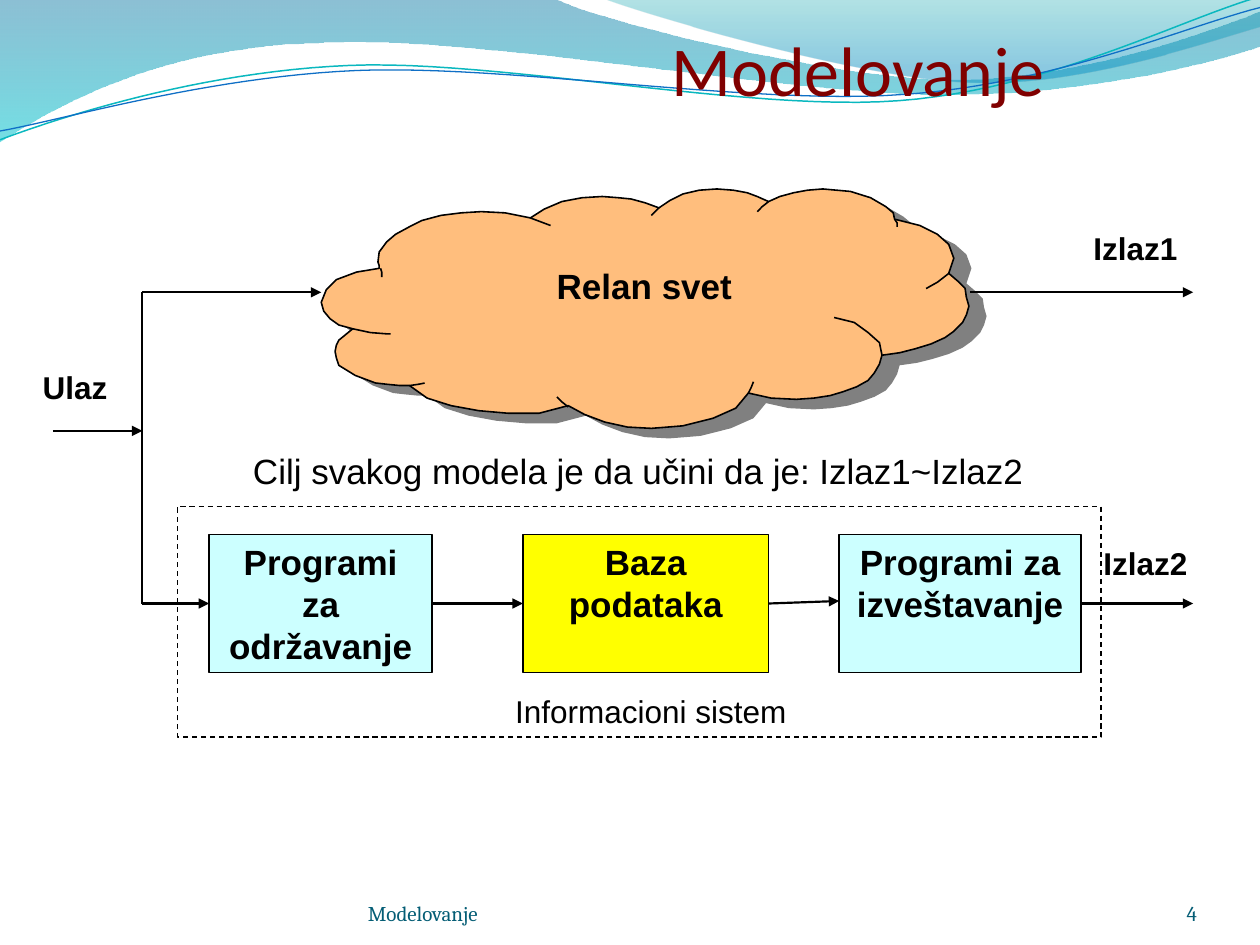
import pptx
import pptx.util
import pptx.dml.color
import pptx.enum.dml
import pptx.enum.shapes
import pptx.enum.text
import pptx.oxml
import pptx.oxml.ns
from lxml import etree

Inches = pptx.util.Inches
Pt = pptx.util.Pt
ANCHOR = pptx.enum.text.MSO_ANCHOR
ALIGN = pptx.enum.text.PP_ALIGN
BLACK = "000000"


def color(value):
    return pptx.dml.color.RGBColor.from_string(value)


def add_xml(parent, tag, **attrs):
    return etree.SubElement(parent, pptx.oxml.ns.qn(tag), attrs)


def write(tf, text, size=18, font="Arial", fill=BLACK, bold=False, align=ALIGN.LEFT,
          anchor=ANCHOR.TOP, insets=(0.1, 0.05, 0.1, 0.05), wrap=True):
    tf.word_wrap = wrap
    tf.auto_size = pptx.enum.text.MSO_AUTO_SIZE.NONE
    tf.vertical_anchor = anchor
    tf.margin_left, tf.margin_top, tf.margin_right, tf.margin_bottom = map(Inches, insets)
    p = tf.paragraphs[0]
    p.alignment = align
    r = p.add_run()
    r.text = text
    r.font.size = Pt(size)
    r.font.name = font
    r.font.bold = bold
    r.font.color.rgb = color(fill)


def flatten(path, steps=24):
    points = [path[0]]
    for part in path[1:]:
        if len(part) == 2:
            points.append(part)
            continue
        start, c1, c2, end = points[-1], part[:2], part[2:4], part[4:]
        for i in range(1, steps + 1):
            t = i / steps
            u = 1 - t
            points.append(tuple(
                u**3 * a + 3 * u * u * t * b + 3 * u * t * t * c + t**3 * d
                for a, b, c, d in zip(start, c1, c2, end)))
    return points


class Slide:
    def __init__(self, prs):
        self.s = prs.slides.add_slide(prs.slide_layouts[5])
        self.shapes = self.s.shapes

    def style(self, sp, fill=None, line=None, width=0.75, dash=None):
        sp.shadow.inherit = False
        if fill:
            sp.fill.solid()
            sp.fill.fore_color.rgb = color(fill)
        else:
            sp.fill.background()
        if line:
            sp.line.color.rgb = color(line)
            sp.line.width = Pt(width)
            sp.line.dash_style = dash
        else:
            sp.line.fill.background()

    def title(self, text, x, y, w, h, **fmt):
        sp = self.shapes.title
        sp.left, sp.top, sp.width, sp.height = map(Inches, (x, y, w, h))
        write(sp.text_frame, text, **fmt)
        self.shapes._spTree.append(sp._element)

    def text(self, text, x, y, w, h, **fmt):
        sp = self.shapes.add_textbox(*map(Inches, (x, y, w, h)))
        write(sp.text_frame, text, **fmt)

    def box(self, x, y, w, h, text=None, **look):
        rect = pptx.enum.shapes.MSO_SHAPE.RECTANGLE
        sp = self.shapes.add_shape(rect, *map(Inches, (x, y, w, h)))
        self.style(sp, line=BLACK, **look)
        if text:
            write(sp.text_frame, text, size=20, bold=True, align=ALIGN.CENTER)

    def freeform(self, path, close=False, dx=0, dy=0, **look):
        points = [(Inches(x + dx), Inches(y + dy)) for x, y in flatten(path)]
        builder = self.shapes.build_freeform(*points[0])
        builder.add_line_segments(points[1:], close=close)
        sp = builder.convert_to_shape()
        self.style(sp, **look)
        return sp

    def wave(self, path, stops):
        sp = self.freeform(path, close=True)
        sp.fill.gradient()
        sp.fill.gradient_angle = 270
        for stop, (position, value, alpha) in zip(sp.fill.gradient_stops, stops):
            stop.position = position
            stop.color.rgb = color(value)
        clrs = sp._element.spPr.iter(pptx.oxml.ns.qn("a:srgbClr"))
        for clr, (position, value, alpha) in zip(clrs, stops):
            add_xml(clr, "a:alpha", val=str(alpha * 1000))

    def line(self, x1, y1, x2, y2, width=1.25, arrow=False):
        straight = pptx.enum.shapes.MSO_CONNECTOR.STRAIGHT
        cn = self.shapes.add_connector(straight, *map(Inches, (x1, y1, x2, y2)))
        cn.line.color.rgb = color(BLACK)
        cn.line.width = Pt(width)
        if arrow:
            add_xml(cn.line._get_or_add_ln(), "a:tailEnd", type="triangle")
        add_xml(cn._element.spPr, "a:effectLst")


WAVES = [
    ([(0, 0), (4.4, -0.01), (4.76, 0.17, 6.64, 0.63, 7.58, 0.63),
      (8.53, 0.63, 9.58, 0.26, 10, 0.09), (10.01, 0.36),
      (9.83, 0.44, 8.7, 0.76, 7.46, 0.75), (6.22, 0.75, 3.82, 0.28, 2.57, 0.34),
      (1.29, 0.36, 0.46, 0.83, -0.01, 1.13)],
     [(0, "0074A1", 45), (1, "00C6CF", 55)]),
    ([(4.79, -0.01), (5.09, 0.11, 6.82, 0.62, 7.69, 0.65),
      (8.56, 0.69, 9.61, 0.32, 10, 0.21), (10, 0)],
     [(0, "00A1A9", 30), (0.8, "008BBF", 45)]),
]
WAVE_LINES = [
    ([(0, 1.11), (0.48, 0.93, 1.58, 0.57, 2.77, 0.52), (3.95, 0.47, 5.93, 0.89, 7.13, 0.8),
      (8.33, 0.71, 9.38, 0.15, 9.98, -0.02)], "0AB8BF", 0.85),
    ([(0, 1.04), (0.47, 0.96, 1.64, 0.61, 2.83, 0.56), (4.03, 0.51, 5.97, 0.84, 7.17, 0.75),
      (8.36, 0.67, 9.41, 0.21, 10, 0.06)], "0F6FC6", 0.75),
]
CLOUD = [
    (3.01, 2.13), (2.83, 2.16), (2.67, 2.22), (2.59, 2.3), (2.57, 2.35), (2.55, 2.4),
    (2.57, 2.47), (2.62, 2.53), (2.69, 2.58), (2.8, 2.61), (2.69, 2.7), (2.67, 2.74),
    (2.66, 2.79), (2.67, 2.84), (2.69, 2.9), (2.82, 2.98), (2.98, 3.04), (3.07, 3.05),
    (3.17, 3.06), (3.25, 3.06), (3.39, 3.16), (3.58, 3.22), (3.8, 3.26), (4.03, 3.28),
    (4.28, 3.28), (4.51, 3.22), (4.64, 3.29), (4.8, 3.35), (4.98, 3.39), (5.17, 3.4),
    (5.3, 3.39), (5.42, 3.38), (5.66, 3.32), (5.84, 3.24), (5.89, 3.18), (5.94, 3.12),
    (6.12, 3.16), (6.32, 3.17), (6.46, 3.16), (6.59, 3.14), (6.69, 3.11), (6.8, 3.07),
    (6.89, 3.02), (6.94, 2.96), (6.98, 2.89), (7, 2.82), (7.14, 2.8), (7.26, 2.77),
    (7.39, 2.73), (7.5, 2.68), (7.57, 2.63), (7.64, 2.56), (7.67, 2.5), (7.69, 2.43),
    (7.67, 2.36), (7.66, 2.29), (7.6, 2.23), (7.53, 2.17), (7.55, 2.11), (7.57, 2.05),
    (7.53, 1.94), (7.44, 1.86), (7.3, 1.79), (7.1, 1.74), (7.09, 1.69), (7.03, 1.64),
    (6.91, 1.57), (6.75, 1.52), (6.53, 1.5), (6.41, 1.51), (6.3, 1.53), (6.19, 1.56),
    (6.1, 1.6), (6.01, 1.56), (5.93, 1.53), (5.82, 1.51), (5.69, 1.5), (5.55, 1.51),
    (5.42, 1.54), (5.32, 1.59), (5.23, 1.65), (5.12, 1.61), (5.01, 1.58), (4.91, 1.57),
    (4.78, 1.56), (4.62, 1.57), (4.46, 1.6), (4.32, 1.66), (4.21, 1.73), (4.01, 1.69),
    (3.82, 1.68), (3.66, 1.69), (3.5, 1.71), (3.35, 1.75), (3.25, 1.8), (3.14, 1.86),
    (3.07, 1.92), (3.01, 2), (3, 2.08), (3.01, 2.11),
]
CLOUD_FOLDS = [
    [(2.8, 2.61), (2.94, 2.64), (3.07, 2.65), (3.1, 2.65)],
    [(3.25, 3.06), (3.32, 3.05), (3.37, 3.04)],
    [(4.42, 3.15), (4.46, 3.19), (4.51, 3.23)],
    [(5.94, 3.12), (5.96, 3.08), (5.98, 3.03)],
    [(7, 2.82), (6.98, 2.72), (6.89, 2.64), (6.78, 2.56), (6.62, 2.52)],
    [(7.35, 2.29), (7.44, 2.24), (7.53, 2.17)],
    [(7.12, 1.8), (7.12, 1.77), (7.1, 1.74)],
    [(6.1, 1.6), (6.05, 1.64), (6.01, 1.68)],
    [(3.02, 2.13), (3.03, 2.16), (3.03, 2.2)],
]


def main():
    prs = pptx.Presentation()
    prs.slide_width, prs.slide_height = Inches(10), Inches(7.5)
    s = Slide(prs)
    for path, stops in WAVES:
        s.wave(path, stops)
    for path, line, width in WAVE_LINES:
        s.freeform(path, line=line, width=width)
    s.title("Modelovanje", 5.33, 0, 4.67, 0.88, size=40, font="Calibri", fill="800000",
            anchor=ANCHOR.BOTTOM, insets=(0, 0.05, 0, 0))
    for text, x, w, align in [("Modelovanje", 2.92, 3.67, ALIGN.LEFT),
                              ("4", 8.67, 0.83, ALIGN.RIGHT)]:
        s.text(text, x, 6.95, w, 0.4, size=12, font="Cambria", fill="045D75",
               align=align, anchor=ANCHOR.BOTTOM, insets=(0, 0, 0, 0))

    s.freeform(CLOUD, close=True, dx=0.14, dy=0.08, fill="808080")
    s.freeform(CLOUD, close=True, fill="FFBE7D", line=BLACK, width=0.9)
    for fold in CLOUD_FOLDS:
        s.freeform(fold, line=BLACK, width=0.9)
    s.line(5.23, 1.65, 5.17, 1.71, width=0.9)
    s.line(4.37, 1.79, 4.21, 1.73, width=0.9)

    for text, x, w, fill in [("Baza podataka", 4.15, 1.95, "FFFF00"),
                             ("Programi za izveštavanje", 6.66, 1.92, "CCFFFF"),
                             ("Programi za održavanje", 1.66, 1.77, "CCFFFF")]:
        s.box(x, 4.24, w, 1.1, text, fill=fill)
    s.line(1.13, 4.79, 1.13, 2.32)
    for ends in [(0.42, 3.42, 1.13, 3.42), (1.13, 2.32, 2.55, 2.32), (1.13, 4.79, 1.66, 4.79),
                 (3.44, 4.79, 4.15, 4.79), (6.1, 4.79, 6.66, 4.77), (7.7, 2.32, 9.47, 2.32),
                 (8.58, 4.79, 9.47, 4.79)]:
        s.line(*ends, arrow=True)

    s.text("Relan svet", 4.32, 2.05, 1.77, 0.82, size=20, bold=True)
    for text, x, y in [("Izlaz1", 8.58, 1.77), ("Izlaz2", 8.66, 4.27), ("Ulaz", 0.24, 2.87)]:
        s.text(text, x, y, 1.06, 0.82, bold=True)
    s.text("Cilj svakog modela je da učini da je: Izlaz1~Izlaz2", 1.91, 3.52, 7.17, 0.58, size=20)
    s.box(1.41, 4.02, 7.33, 1.83, dash=pptx.enum.dml.MSO_LINE.DASH)
    s.text("Informacioni sistem", 3.99, 5.44, 2.35, 0.4, wrap=False)
    prs.save("out.pptx")


if __name__ == "__main__":
    main()
